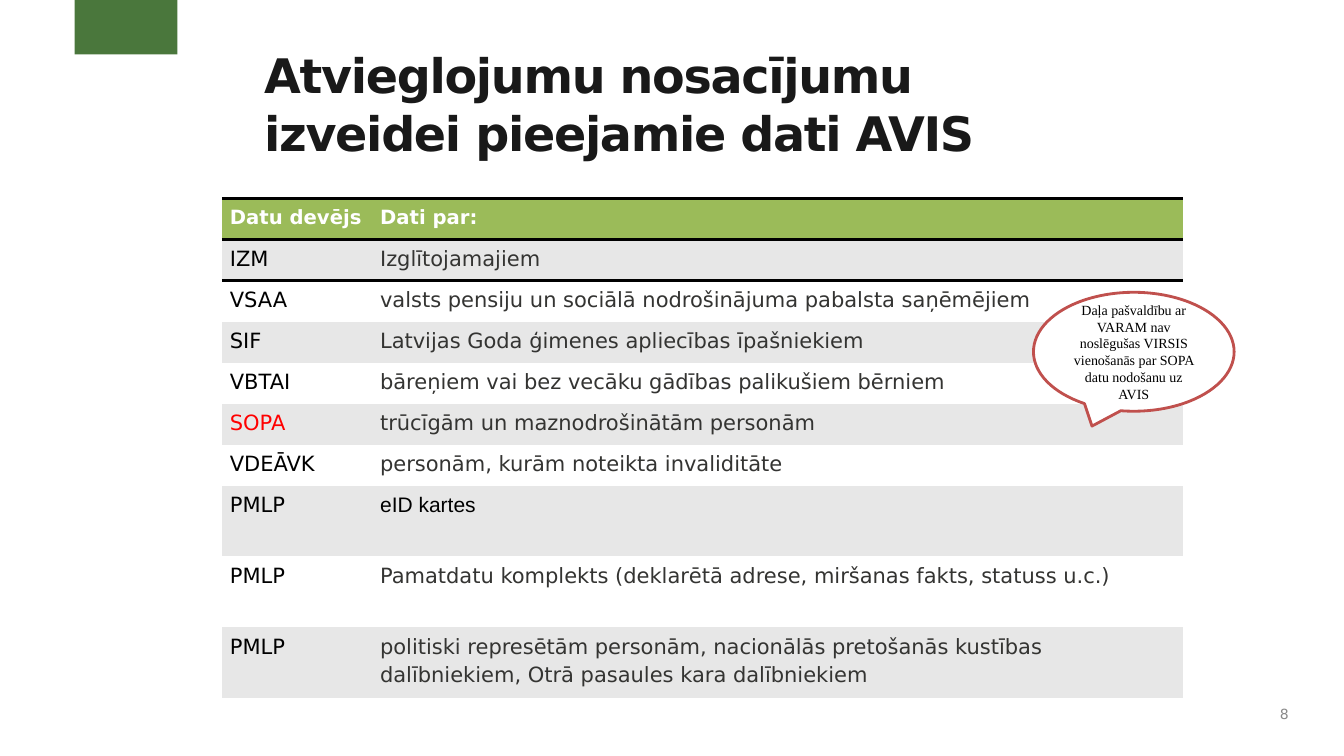
from pptx import Presentation
from pptx.dml.color import RGBColor
from pptx.enum.shapes import MSO_SHAPE as Shape
from pptx.enum.text import MSO_ANCHOR as Anchor, PP_ALIGN as Align
from pptx.oxml import parse_xml
from pptx.oxml.ns import nsdecls
from pptx.util import Inches, Pt

# Content
TITLE = "Atvieglojumu nosacījumu izveidei pieejamie dati AVIS"
HEAD = ("Datu devējs", "Dati par:")
ROWS = [
    ("IZM", "Izglītojamajiem"),
    ("VSAA", "valsts pensiju un sociālā nodrošinājuma pabalsta saņēmējiem"),
    ("SIF", "Latvijas Goda ģimenes apliecības īpašniekiem"),
    ("VBTAI", "bāreņiem vai bez vecāku gādības palikušiem bērniem"),
    ("SOPA", "trūcīgām un maznodrošinātām personām"),
    ("VDEĀVK", "personām, kurām noteikta invaliditāte"),
    ("PMLP", "eID kartes"),
    ("PMLP", "Pamatdatu komplekts (deklarētā adrese, miršanas fakts, statuss u.c.)"),
    ("PMLP", "politiski represētām personām, nacionālās pretošanās kustības "
             "dalībniekiem, Otrā pasaules kara dalībniekiem"),
]
NOTE = ("Daļa pašvaldību ar VARAM nav noslēgušas VIRSIS vienošanās "
        "par SOPA datu nodošanu uz AVIS")
PAGE = "8"

# Look
SANS = "DejaVu Sans"
COLS = (1.49, 8.04)
LOW, TALL = 0.407, 0.703
NO_STYLE = "{2D5ABB26-0587-4C30-8999-92F81FD0307C}"


def paint(target, code):
    """Colour a fill or a font from a hex string."""
    if hasattr(target, "solid"):
        target.solid()
        target.fore_color.rgb = RGBColor.from_string(code)
    else:
        target.color.rgb = RGBColor.from_string(code)


def write(frame, text, size, color="000000", font=SANS, bold=False,
          align=Align.LEFT, line=None, after=None, track=None):
    par = frame.paragraphs[0]
    par.alignment = align
    par.line_spacing = line
    if after:
        par.space_after = Pt(after)
    run = par.add_run()
    run.text = text
    run.font.size, run.font.name, run.font.bold = Pt(size), font, bold
    paint(run.font, color)
    if track:
        run.font._element.set("spc", str(int(track * 100)))


def box(x, y, w, h, inset=(0, 0), anchor=Anchor.TOP):
    frame = slide.shapes.add_textbox(*map(Inches, (x, y, w, h))).text_frame
    frame.word_wrap = True
    frame.margin_left = frame.margin_right = Inches(inset[0])
    frame.margin_top = frame.margin_bottom = Inches(inset[1])
    frame.vertical_anchor = anchor
    return frame


def shape(kind, x, y, w, h, fill):
    item = slide.shapes.add_shape(kind, *map(Inches, (x, y, w, h)))
    item.shadow.inherit = False
    paint(item.fill, fill)
    return item


def rule(cell, sides):
    """Draw black lines on the given sides, in schema order."""
    props = cell._tc.get_or_add_tcPr()
    for spot, side in enumerate(sides):
        props.insert(spot, parse_xml(
            f'<a:ln{side} {nsdecls("a")} w="{Pt(2.25)}"><a:solidFill>'
            f'<a:srgbClr val="000000"/></a:solidFill></a:ln{side}>'))


deck = Presentation()
deck.slide_width, deck.slide_height = Inches(13.33), Inches(7.5)
slide = deck.slides.add_slide(deck.slide_layouts[6])

# Green tab, title and page number
tab = shape(Shape.RECTANGLE, 0.74, 0, 1.02, 0.54, "4A773C")
tab.line.fill.background()
write(box(2.62, 0.46, 8.22, 1.14), TITLE, 34, "191919", bold=True, track=-0.9)
write(box(12.44, 6.92, 0.44, 0.33, (0.1, 0.05), Anchor.MIDDLE), PAGE, 10,
      "898989", align=Align.RIGHT)

# Table
data = [HEAD] + ROWS
highs = [LOW] * 7 + [TALL] * 3
holder = slide.shapes.add_table(
    len(data), len(COLS), Inches(2.2), Inches(1.97),
    Inches(sum(COLS)), Inches(sum(highs)))
holder._element.xpath(".//a:tableStyleId")[0].text = NO_STYLE
table = holder.table
for col, width in zip(table.columns, COLS):
    col.width = Inches(width)
for r, (row, high) in enumerate(zip(data, highs)):
    table.rows[r].height = Inches(high)
    for c, text in enumerate(row):
        cell = table.cell(r, c)
        cell.margin_left = cell.margin_right = Inches(0.08)
        cell.margin_top = cell.margin_bottom = Inches(0.04)
        look = {"size": 15, "color": "343432" if c else "000000"}
        if r == 0:
            look = {"size": 14, "color": "FFFFFF", "bold": True}
        elif text == "SOPA":
            look["color"] = "FF0000"
        elif text == "eID kartes":
            look.update(color="000000", font="Arial")
        write(cell.text_frame, text, line=1.15, after=8, **look)
        paint(cell.fill, "9BBB59" if r == 0 else "E7E7E7" if r % 2 else "FFFFFF")
        if r < 2:
            rule(cell, "T" if r else "TB")

# Callout
note = shape(Shape.OVAL_CALLOUT, 10.25, 2.9, 1.99, 1.18, "FFFFFF")
paint(note.line, "C0504D")
note.line.width = Pt(2)
note.text_frame.word_wrap = True
note.text_frame.vertical_anchor = Anchor.MIDDLE
write(note.text_frame, NOTE, 10, font="Times New Roman", align=Align.CENTER)

deck.save("out.pptx")
